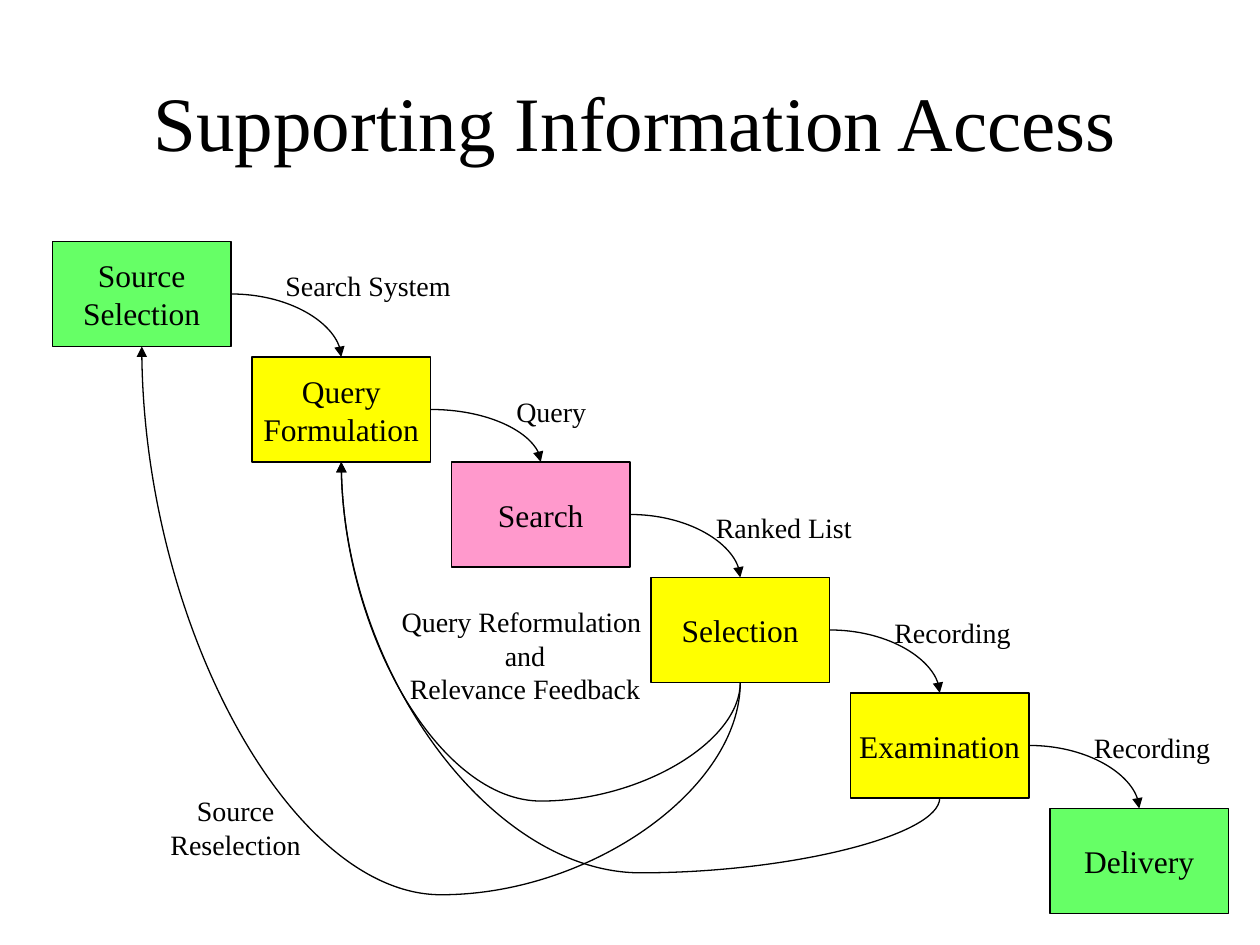
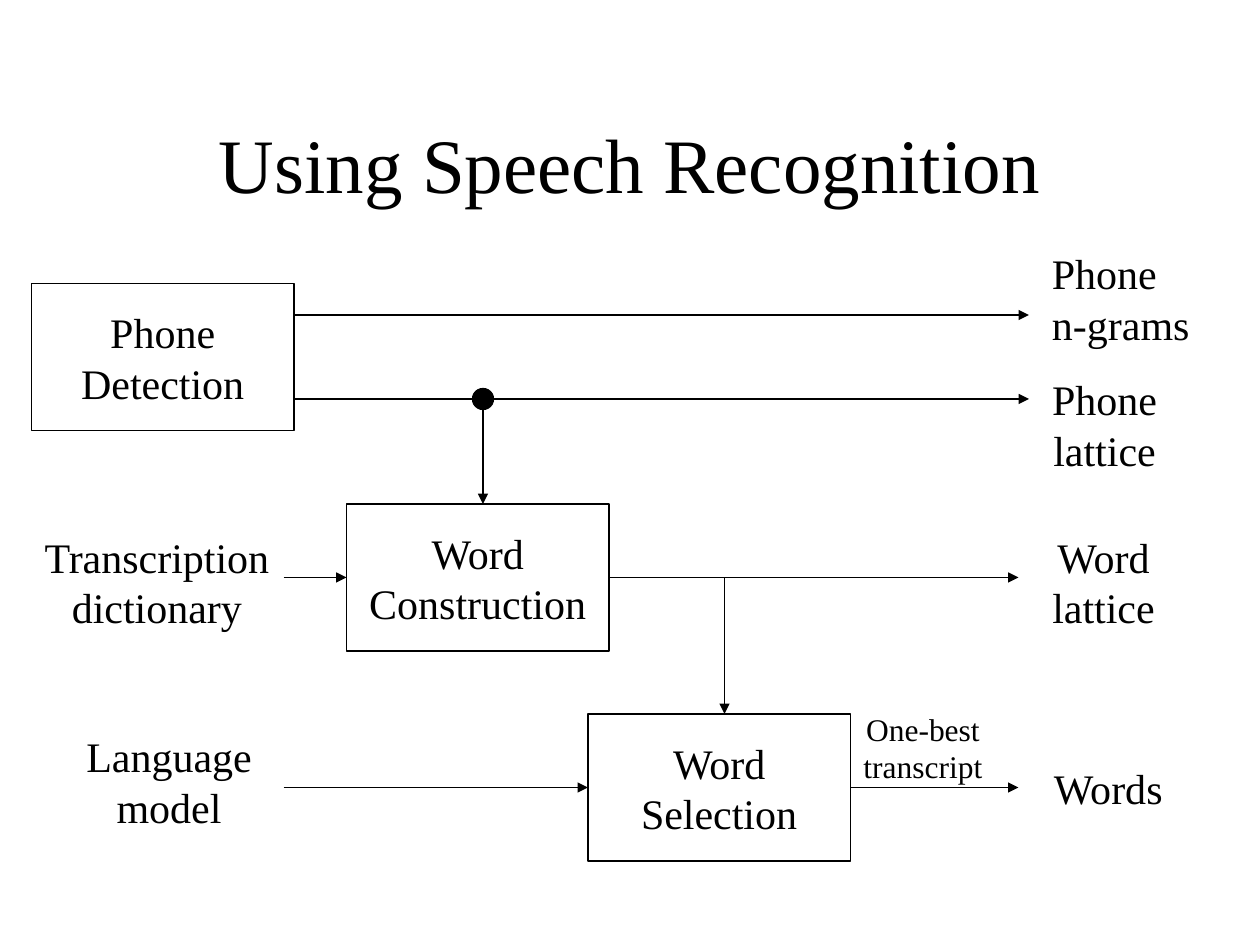
from lxml.etree import SubElement
from pptx import Presentation
from pptx.dml.color import RGBColor
from pptx.enum.shapes import MSO_CONNECTOR, MSO_SHAPE
from pptx.enum.text import MSO_ANCHOR, MSO_AUTO_SIZE, PP_ALIGN
from pptx.oxml.ns import qn
from pptx.util import Pt

# Grid of 120 columns by 90 rows, shared by both slides
COLS, ROWS = 120, 90
CELL = Pt(6)
FONT = "Times New Roman"
BLACK, GREEN, YELLOW, PINK = "000000", "66FF66", "FFFF00", "FF99CC"
TITLE_SIZE, LINE_WIDTH = 44, 0.75
TOP, BOTTOM, RIGHT, LEFT = 0, 2, 3, 1


def cells(*counts):
    return [round(n * CELL) for n in counts]


def color(hex_code):
    return RGBColor.from_string(hex_code)


def write(tf, lines, size, align=PP_ALIGN.CENTER, wrap=False):
    tf.word_wrap = wrap
    for i, line in enumerate(lines):
        p = tf.paragraphs[0] if i == 0 else tf.add_paragraph()
        p.alignment = align
        r = p.add_run()
        r.text = line
        r.font.name = FONT
        r.font.size = Pt(size)
        r.font.color.rgb = color(BLACK)


def add_title(slide, text, left, top, width, height=15):
    tf = slide.shapes.add_textbox(*cells(left, top, width, height)).text_frame
    tf.vertical_anchor = MSO_ANCHOR.MIDDLE
    write(tf, [text], TITLE_SIZE, wrap=True)


def add_label(slide, lines, left, top, width, size, align=PP_ALIGN.CENTER):
    height = len(lines) * size / 5 + 1.2
    tf = slide.shapes.add_textbox(*cells(left, top, width, height)).text_frame
    write(tf, lines, size, align)
    tf.auto_size = MSO_AUTO_SIZE.SHAPE_TO_FIT_TEXT


def add_shape(slide, kind, left, top, width, height, fill=None):
    sp = slide.shapes.add_shape(kind, *cells(left, top, width, height))
    sp.shadow.inherit = False
    if fill:
        sp.fill.solid()
        sp.fill.fore_color.rgb = color(fill)
    else:
        sp.fill.background()
    sp.line.color.rgb = color(BLACK)
    sp.line.width = Pt(LINE_WIDTH)
    return sp


def add_box(slide, lines, left, top, width, height, size, fill=None):
    sp = add_shape(slide, MSO_SHAPE.RECTANGLE, left, top, width, height, fill)
    sp.text_frame.vertical_anchor = MSO_ANCHOR.MIDDLE
    write(sp.text_frame, lines, size)
    return sp


def add_arrow(slide, x1, y1, x2, y2, kind=MSO_CONNECTOR.STRAIGHT, begin=None, end=None):
    """begin and end are (shape, side) pairs to join."""
    cxn = slide.shapes.add_connector(kind, *cells(x1, y1, x2, y2))
    if begin:
        cxn.begin_connect(*begin)
    if end:
        cxn.end_connect(*end)
    cxn.line.color.rgb = color(BLACK)
    cxn.line.width = Pt(LINE_WIDTH)
    SubElement(cxn.line._get_or_add_ln(), qn("a:tailEnd"), type="triangle")
    SubElement(cxn._element.spPr, qn("a:effectLst"))
    return cxn


def add_step(slide, source, target):
    """Quarter curve from the right side of one box to the top of the next."""
    cxn = add_arrow(slide, 0, 0, 1, 1, MSO_CONNECTOR.CURVE, (source, RIGHT), (target, TOP))
    cxn._element.spPr.find(qn("a:prstGeom")).set("prst", "curvedConnector2")


def add_feedback(slide, source, target, depth):
    """Curve that dips depth rows below source and rises to target's bottom."""
    cxn = add_arrow(slide, 1, 1, 0, 0, MSO_CONNECTOR.CURVE, (source, BOTTOM), (target, BOTTOM))
    span, rise = cxn.width, cxn.height
    mid_x, mid_y = cxn.left + span // 2, cxn.top + rise // 2
    # The frame is turned by 270 degrees, so its sides change places
    cxn.left, cxn.top = mid_x - rise // 2, mid_y - span // 2
    cxn.width, cxn.height = rise, span
    xfrm = cxn._element.spPr.find(qn("a:xfrm"))
    for name, value in (("rot", "16200000"), ("flipH", "0"), ("flipV", "1")):
        xfrm.set(name, value)
    geom = cxn._element.spPr.find(qn("a:prstGeom"))
    guides = geom.find(qn("a:avLst"))
    if guides is None:
        guides = SubElement(geom, qn("a:avLst"))
    bend = round(-100000 * depth * CELL / rise)
    SubElement(guides, qn("a:gd"), name="adj1", fmla=f"val {bend}")


def build_access(slide):
    add_title(slide, "Supporting Information Access", 7, 4, 107)

    # Staircase of stages
    stages = [
        (["Source", "Selection"], 23, GREEN),
        (["Query", "Formulation"], 34, YELLOW),
        (["Search"], 44, PINK),
        (["Selection"], 55, YELLOW),
        (["Examination"], 66, YELLOW),
        (["Delivery"], 77, GREEN),
    ]
    boxes = [add_box(slide, lines, 5 + 19 * i, top, 17, 10, 18, fill)
             for i, (lines, top, fill) in enumerate(stages)]
    for source, target in zip(boxes, boxes[1:]):
        add_step(slide, source, target)

    # What each stage hands on
    for text, left, top, width in [
        ("Search System", 26, 25, 18.24),
        ("Query", 48, 37, 9.12),
        ("Ranked List", 67, 48, 15.36),
        ("Recording", 84, 58, 13.56),
        ("Recording", 103, 69, 13.56),
    ]:
        add_label(slide, [text], left, top, width, 16, PP_ALIGN.LEFT)

    # Feedback loops
    source_selection, query, _, selection, examination, _ = boxes
    add_feedback(slide, selection, query, 11.3)
    add_feedback(slide, examination, query, 7.14)
    add_feedback(slide, selection, source_selection, 20.22)
    add_label(slide, ["Query Reformulation ", "and", "Relevance Feedback"], 37, 57, 26, 16)
    add_label(slide, ["Source", "Reselection"], 15, 75, 14.88, 16)


def build_speech(slide):
    add_title(slide, "Using Speech Recognition", 9, 8, 102)

    # Processing stages
    _, construction, selection = [
        add_box(slide, lines, left, top, 25, 14, 24)
        for lines, left, top in [
            (["Phone", "Detection"], 3, 27),
            (["Word", "Construction"], 33, 48),
            (["Word", "Selection"], 56, 68),
        ]]

    # Flows between inputs, stages and outputs
    for ends in [(28, 30, 98, 30), (28, 38, 98, 38), (46, 38, 46, 48), (69, 55, 69, 68)]:
        add_arrow(slide, *ends)
    for stage, left, right, y in [(construction, 33, 58, 55), (selection, 56, 81, 75)]:
        add_arrow(slide, 27, y, left, y, end=(stage, LEFT))
        add_arrow(slide, right, y, 97, y, begin=(stage, RIGHT))
    add_shape(slide, MSO_SHAPE.OVAL, 45, 37, 2, 2, BLACK)

    # Inputs and outputs
    add_label(slide, ["Phone", "n-grams"], 99, 23, 15.48, 24, PP_ALIGN.LEFT)
    for lines, left, top, width, size in [
        (["Phone", "lattice"], 98.9, 35, 12.6, 24),
        (["Word", "lattice"], 98.8, 50, 12.6, 24),
        (["Words"], 98.9, 72, 13.3, 24),
        (["Transcription", "dictionary"], 2.8, 50, 24.3, 24),
        (["Language", "model"], 6.8, 69, 18.6, 24),
        (["One-best", "transcript"], 80.9, 67, 14, 18),
    ]:
        add_label(slide, lines, left, top, width, size)


def main():
    prs = Presentation()
    prs.slide_width, prs.slide_height = cells(COLS, ROWS)
    blank = prs.slide_layouts[6]
    for build in (build_access, build_speech):
        build(prs.slides.add_slide(blank))
    prs.save("out.pptx")


if __name__ == "__main__":
    main()
